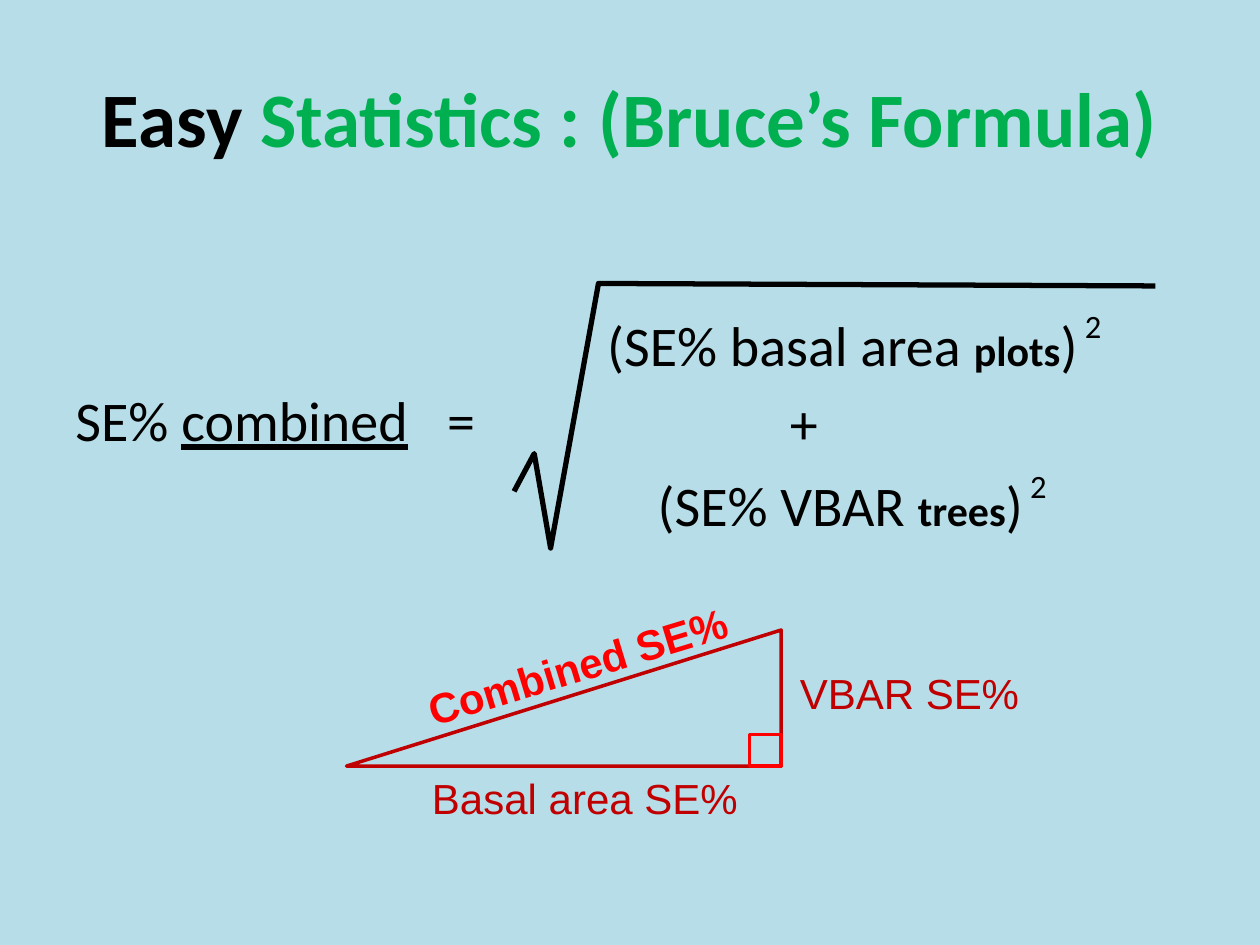
from dataclasses import dataclass

from pptx import Presentation
from pptx.dml.color import RGBColor
from pptx.enum import shapes, text
from pptx.util import Inches, Pt


@dataclass(frozen=True)
class Theme:
    background: str = "B7DEE8"
    ink: str = "000000"
    green: str = "00B050"
    dark_red: str = "C00000"
    red: str = "FF0000"
    heading: str = "Calibri"
    label: str = "Arial"
    title_size: int = 44
    formula_size: int = 32
    small_size: int = 24


THEME = Theme()


@dataclass(frozen=True)
class Run:
    text: str
    size: int = THEME.formula_size
    color: str = THEME.ink
    font: str = THEME.heading
    bold: bool = False
    underline: bool = False
    raised: bool = False


@dataclass(frozen=True)
class Line:
    runs: tuple[Run, ...]
    indent: float = 0


@dataclass(frozen=True)
class Box:
    left: float
    top: float
    width: float
    height: float
    lines: tuple[Line, ...]
    align: text.PP_ALIGN = text.PP_ALIGN.LEFT
    anchor: text.MSO_ANCHOR = text.MSO_ANCHOR.TOP
    rotation: float = 0


@dataclass(frozen=True)
class Outline:
    points: tuple[tuple[float, float], ...]
    color: str
    weight: float
    closed: bool = False


def squared_term(name: str, subject: str, indent: float = 0) -> Line:
    return Line((Run(f"(SE% {name} "), Run(subject, THEME.small_size, bold=True),
                 Run(")"), Run(" 2", raised=True)), indent)


def label(words: str, left: float, top: float, width: float,
          color: str = THEME.dark_red, bold: bool = False, rotation: float = 0) -> Box:
    run = Run(words, THEME.small_size, color, THEME.label, bold)
    return Box(left, top, width, 0.51, (Line((run,)),), rotation=rotation)


FORMULA_MIDDLE = 3.01

TITLE = Box(0.5, 0.3, 9, 1.25,
            (Line((Run("Easy", THEME.title_size, bold=True),
                   Run(" Statistics : (Bruce’s Formula)", THEME.title_size,
                       THEME.green, bold=True))),),
            text.PP_ALIGN.CENTER, text.MSO_ANCHOR.MIDDLE)
RESULT = Box(0.5, FORMULA_MIDDLE, 2.9, 0.64,
             (Line((Run("SE% "), Run("combined", underline=True))),))
EQUALS = Box(3.45, FORMULA_MIDDLE, 0.5, 0.64, (Line((Run("="),)),))
RADICAND = Box(4.72, 2.38, 4.78, 2,
               (squared_term("basal area", "plots"),
                Line((Run("+"),), 1.45),
                squared_term("VBAR", "trees", 0.4)))
LABELS = (
    label("Combined SE%", 3.25, 5, 2.87, THEME.red, True, 343.1),
    label("Basal area SE%", 3.33, 6.08, 2.75),
    label("VBAR SE%", 6.25, 5.25, 2.17),
)

RADICAL = Outline(((9.17, 2.27), (4.75, 2.25), (4.37, 4.35), (4.24, 3.6), (4.08, 3.9)),
                  THEME.ink, 3)
TRIANGLE = Outline(((2.75, 6.08), (6.2, 6.08), (6.2, 5)), THEME.dark_red, 2, True)
CORNER_SIZE = 0.25


def add_run(p, run: Run) -> None:
    r = p.add_run()
    r.text = run.text
    formats = {"name": run.font, "size": Pt(run.size),
               "bold": run.bold, "underline": run.underline}
    for key, value in formats.items():
        setattr(r.font, key, value)
    r.font.color.rgb = RGBColor.from_string(run.color)
    if run.raised:
        r.font._element.set("baseline", "50000")


def add_box(s, box: Box) -> None:
    sp = s.shapes.add_textbox(*map(Inches, (box.left, box.top, box.width, box.height)))
    sp.rotation = box.rotation
    tf = sp.text_frame
    tf.word_wrap = True
    tf.vertical_anchor = box.anchor
    for i, line in enumerate(box.lines):
        p = tf.add_paragraph() if i else tf.paragraphs[0]
        p.alignment = box.align
        p.space_before = Pt(6 if i else 0)
        p._p.get_or_add_pPr().set("marL", str(Inches(line.indent)))
        for run in line.runs:
            add_run(p, run)


def style_outline(sp, color: str, weight: float) -> None:
    sp.shadow.inherit = False
    sp.fill.background()
    sp.line.color.rgb = RGBColor.from_string(color)
    sp.line.width = Pt(weight)


def add_outline(s, outline: Outline) -> None:
    start, *rest = [(Inches(x), Inches(y)) for x, y in outline.points]
    builder = s.shapes.build_freeform(*start)
    builder.add_line_segments(rest, close=outline.closed)
    style_outline(builder.convert_to_shape(), outline.color, outline.weight)


def add_right_angle(s, x: float, y: float) -> None:
    """Mark the right angle whose corner is at x, y."""
    size = Inches(CORNER_SIZE)
    sp = s.shapes.add_shape(shapes.MSO_SHAPE.RECTANGLE, Inches(x) - size,
                            Inches(y) - size, size, size)
    style_outline(sp, THEME.red, 2)


def main() -> None:
    prs = Presentation()
    prs.slide_width, prs.slide_height = Inches(10), Inches(7.5)
    s = prs.slides.add_slide(prs.slide_layouts[6])
    s.background.fill.solid()
    s.background.fill.fore_color.rgb = RGBColor.from_string(THEME.background)
    for box in (TITLE, RESULT, EQUALS, RADICAND):
        add_box(s, box)
    for outline in (RADICAL, TRIANGLE):
        add_outline(s, outline)
    for box in LABELS:
        add_box(s, box)
    add_right_angle(s, *TRIANGLE.points[1])
    prs.save("out.pptx")


if __name__ == "__main__":
    main()
